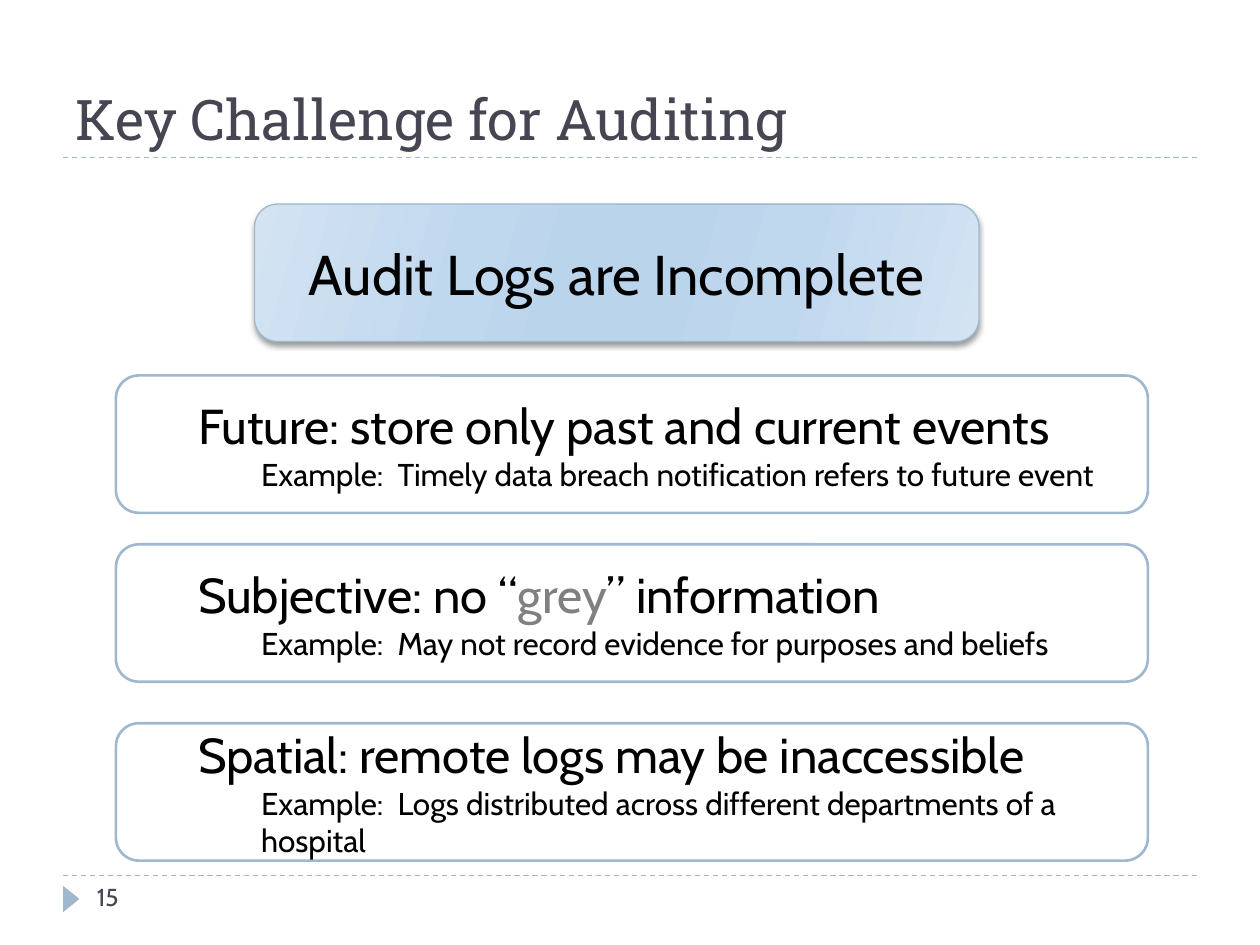
from lxml.etree import SubElement
from pptx import Presentation
from pptx.dml.color import RGBColor
from pptx.enum.dml import MSO_LINE
from pptx.enum.shapes import MSO_CONNECTOR, MSO_SHAPE
from pptx.enum.text import MSO_ANCHOR, PP_ALIGN
from pptx.oxml.ns import qn
from pptx.util import Inches, Pt

INK = RGBColor(0x46, 0x46, 0x53)
BLUE = RGBColor(0x9F, 0xB8, 0xCD)
BLACK = RGBColor(0, 0, 0)
GREY = RGBColor(0x80, 0x80, 0x80)
WHITE = RGBColor(0xFF, 0xFF, 0xFF)
PALE = RGBColor(0xD3, 0xE3, 0xF2)
MID = RGBColor(0xC0, 0xD8, 0xEE)
DEEP = RGBColor(0xBA, 0xD4, 0xEC)
STOPS = [(0, PALE), (30, MID), (45, DEEP), (55, DEEP), (73, MID), (100, PALE)]
BODY, HEAD = "Cabin", "Roboto Slab"
WIDTH, HEIGHT = Inches(10), Inches(7.5)
COLS, ROWS = 100, 75

CARDS = [
    (29.8, [("Future: store only past and current events", BLACK)],
     "Example:  Timely data breach notification refers to future event"),
    (43.2, [("Subjective: no “", BLACK), ("grey", GREY), ("” information", BLACK)],
     "Example:  May not record evidence for purposes and beliefs"),
    (57.4, [("Spatial: remote logs may be inaccessible", BLACK)],
     "Example:  Logs distributed across different departments of a hospital"),
]


def grid(x, y):
    return round(WIDTH * x / COLS), round(HEIGHT * y / ROWS)


def write(par, runs, size, font=BODY):
    for text, color in runs:
        run = par.add_run()
        run.text = text
        run.font.size = Pt(size)
        run.font.name = font
        run.font.color.rgb = color


def rule(slide, row):
    line = slide.shapes.add_connector(
        MSO_CONNECTOR.STRAIGHT, *grid(5, row), *grid(95, row))
    line.line.color.rgb = BLUE
    line.line.width = Pt(0.75)
    line.line.dash_style = MSO_LINE.DASH
    SubElement(line._element.spPr, qn("a:effectLst"))


def label(slide, box, text, size, font, anchor):
    frame = slide.shapes.add_textbox(*grid(*box[:2]), *grid(*box[2:])).text_frame
    frame.word_wrap = True
    frame.vertical_anchor = anchor
    write(frame.paragraphs[0], [(text, INK)], size, font)


def marker(slide):
    mark = slide.shapes.add_shape(
        MSO_SHAPE.ISOSCELES_TRIANGLE, *grid(4.6, 70.7), *grid(2.1, 1.3))
    mark.rotation = 90
    mark.shadow.inherit = False
    mark.fill.solid()
    mark.fill.fore_color.rgb = BLUE
    mark.line.fill.background()


def panel(slide, x, y, width, weight):
    box = slide.shapes.add_shape(
        MSO_SHAPE.ROUNDED_RECTANGLE, *grid(x, y), *grid(width, 10.9))
    box.shadow.inherit = False
    box.line.color.rgb = BLUE
    box.line.width = Pt(weight)
    box.text_frame.word_wrap = True
    box.text_frame.vertical_anchor = MSO_ANCHOR.MIDDLE
    return box


def blend(box):
    box.fill.gradient()
    box.fill.gradient_angle = 344
    stops = next(box._element.spPr.iter(qn("a:gsLst")))
    for stop in list(stops):
        stops.remove(stop)
    for share, color in STOPS:
        stop = SubElement(stops, qn("a:gs"), pos=str(share * 1000))
        SubElement(stop, qn("a:srgbClr"), val=str(color))


def shade(box):
    effect = box._element.spPr.find(qn("a:effectLst"))
    drop = SubElement(effect, qn("a:outerShdw"), blurRad=str(Pt(3)),
                      dist=str(Pt(2)), dir="5400000", rotWithShape="0")
    color = SubElement(drop, qn("a:srgbClr"), val=str(BLACK))
    SubElement(color, qn("a:alpha"), val="40000")


def banner(slide, text):
    box = panel(slide, 20.2, 16.2, 57.5, 0.75)
    blend(box)
    shade(box)
    par = box.text_frame.paragraphs[0]
    par.alignment = PP_ALIGN.CENTER
    write(par, [(text, BLACK)], 32)


def card(slide, row, runs, note):
    box = panel(slide, 9.2, row, 81.9, 1.5)
    box.fill.solid()
    box.fill.fore_color.rgb = WHITE
    frame = box.text_frame
    pars = frame.paragraphs[0], frame.add_paragraph()
    for level, par in enumerate(pars, 1):
        par.level = level
        par.alignment = PP_ALIGN.LEFT
    write(pars[0], runs, 28)
    write(pars[1], [(note, BLACK)], 18)


def main():
    deck = Presentation()
    deck.slide_width, deck.slide_height = WIDTH, HEIGHT
    slide = deck.slides.add_slide(deck.slide_layouts[6])
    for row in (69.5, 12.5):
        rule(slide, row)
    marker(slide)
    label(slide, (6.7, 69.5, 21.7, 4), "15", 14, BODY, MSO_ANCHOR.TOP)
    label(slide, (5, 2.5, 90, 10), "Key Challenge for Auditing", 32, HEAD,
          MSO_ANCHOR.BOTTOM)
    banner(slide, "Audit Logs are Incomplete")
    for row, runs, note in CARDS:
        card(slide, row, runs, note)
    deck.save("out.pptx")


if __name__ == "__main__":
    main()
